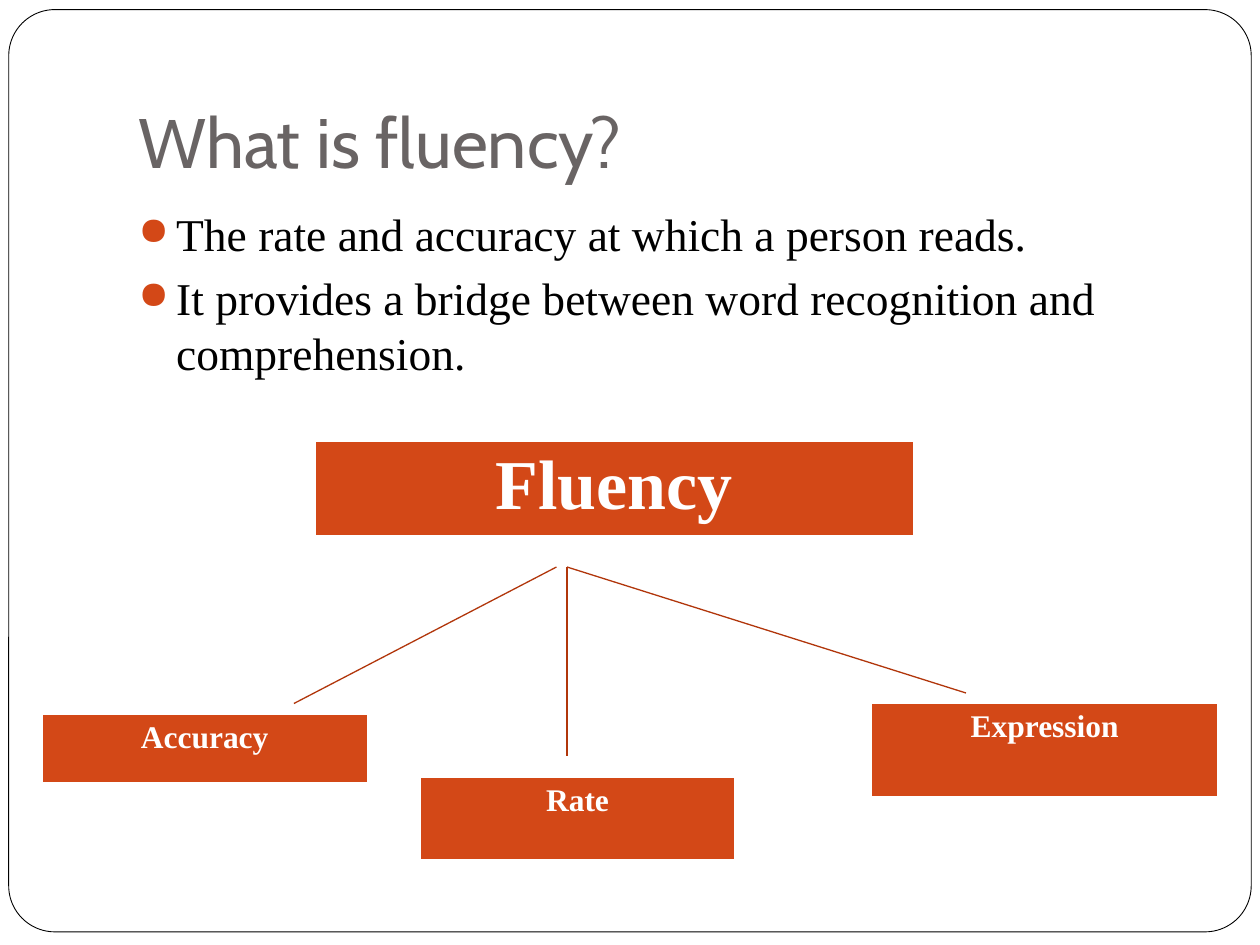
import pptx
import pptx.util
import pptx.dml.color
import pptx.enum.shapes
import pptx.enum.text
import pptx.oxml
import pptx.oxml.ns
from lxml import etree

Pt = pptx.util.Pt
RGBColor = pptx.dml.color.RGBColor
qn = pptx.oxml.ns.qn

WHITE = RGBColor(0xFF, 0xFF, 0xFF)
BLACK = RGBColor(0, 0, 0)
GRAY = RGBColor(0x69, 0x64, 0x64)
ORANGE = RGBColor(0xD3, 0x48, 0x17)
RUST = RGBColor(0xB1, 0x36, 0x0B)
SERIF = "Times New Roman"

POINTS = (
    "The rate and accuracy at which a person reads.",
    "It provides a bridge between word recognition and comprehension.",
)


def add_run(paragraph, text, font, size, color, bold=False):
    """Add one formatted run to a paragraph."""
    run = paragraph.add_run()
    run.text = text
    run.font.name = font
    run.font.size = Pt(size)
    run.font.bold = bold
    run.font.color.rgb = color


def add_frame(slide, left, top, width, height):
    """Draw the rounded border of the slide."""
    frame = slide.shapes.add_shape(
        pptx.enum.shapes.MSO_SHAPE.ROUNDED_RECTANGLE,
        Pt(left), Pt(top), Pt(width), Pt(height))
    frame.adjustments[0] = 0.05
    frame.shadow.inherit = False
    frame.fill.solid()
    frame.fill.fore_color.rgb = WHITE
    frame.line.color.rgb = BLACK
    frame.line.width = Pt(0.5)


def add_text_area(slide, left, top, width, height):
    """Add a wrapping text box and return its text frame."""
    area = slide.shapes.add_textbox(Pt(left), Pt(top), Pt(width), Pt(height)).text_frame
    area.word_wrap = True
    return area


def add_title(slide, left, top, width, height):
    """Place the heading at the bottom of its box."""
    heading = add_text_area(slide, left, top, width, height)
    heading.vertical_anchor = pptx.enum.text.MSO_ANCHOR.BOTTOM
    heading.margin_bottom = Pt(7.2)
    add_run(heading.paragraphs[0], "What is fluency?", "Cabin", 40, GRAY)


def add_bullet(paragraph, indent):
    """Give a paragraph a hanging orange bullet."""
    properties = paragraph._p.get_or_add_pPr()
    properties.set("marL", str(Pt(indent)))
    properties.set("indent", str(-Pt(indent)))
    color = etree.SubElement(properties, qn("a:buClr"))
    etree.SubElement(color, qn("a:srgbClr"), val=str(ORANGE))
    etree.SubElement(properties, qn("a:buSzPct"), val="85000")
    etree.SubElement(properties, qn("a:buChar"), char="●")


def add_definition(slide, left, top, width, height):
    """Write the bulleted definition of fluency."""
    definition = add_text_area(slide, left, top, width, height)
    for index, point in enumerate(POINTS):
        paragraph = definition.add_paragraph() if index else definition.paragraphs[0]
        paragraph.space_before = Pt(5.8)
        add_bullet(paragraph, 21.6)
        add_run(paragraph, point, SERIF, 26, BLACK)


def add_cell_borders(cell):
    """Draw white cell edges, the bottom one thicker."""
    properties = cell._tc.get_or_add_tcPr()
    for position, (edge, width) in enumerate((("L", 1), ("R", 1), ("T", 1), ("B", 3))):
        border = etree.Element(qn(f"a:ln{edge}"), w=str(Pt(width)))
        fill = etree.SubElement(border, qn("a:solidFill"))
        etree.SubElement(fill, qn("a:srgbClr"), val=str(WHITE))
        properties.insert(position, border)


def add_label(slide, left, top, width, height, text, size):
    """Place a one-cell table holding a concept name."""
    table = slide.shapes.add_table(
        1, 1, Pt(left), Pt(top), Pt(width), Pt(height)).table
    cell = table.cell(0, 0)
    cell.fill.solid()
    cell.fill.fore_color.rgb = ORANGE
    add_cell_borders(cell)
    paragraph = cell.text_frame.paragraphs[0]
    paragraph.alignment = pptx.enum.text.PP_ALIGN.CENTER
    add_run(paragraph, text, SERIF, size, WHITE, True)


def add_branch(slide, start_x, start_y, end_x, end_y):
    """Draw a thin line from the concept to one of its parts."""
    branch = slide.shapes.add_connector(
        pptx.enum.shapes.MSO_CONNECTOR.STRAIGHT,
        Pt(start_x), Pt(start_y), Pt(end_x), Pt(end_y))
    branch.line.color.rgb = RUST
    branch.line.width = Pt(0.75)
    etree.SubElement(branch._element.spPr, qn("a:effectLst"))


def add_fluency_tree(slide, left, top):
    """Place the concept, its three parts and the branches between them."""
    add_label(slide, left + 156, top, 342, 54, "Fluency", 40)
    branches = ((294, 72, 144, 150), (300, 72, 528, 144), (300, 72, 300, 180))
    for start_x, start_y, end_x, end_y in branches:
        add_branch(slide, left + start_x, top + start_y, left + end_x, top + end_y)
    parts = (
        ("Accuracy", 0, 156, 186, 40),
        ("Rate", 216, 192, 180, 48),
        ("Expression", 474, 150, 198, 54),
    )
    for text, x, y, width, height in parts:
        add_label(slide, left + x, top + y, width, height, text, 18)


def main():
    """Build the slide and save it."""
    presentation = pptx.Presentation()
    presentation.slide_width = Pt(720)
    presentation.slide_height = Pt(540)
    slide = presentation.slides.add_slide(presentation.slide_layouts[6])
    add_frame(slide, 5, 5.5, 710, 527)
    add_title(slide, 72, 21.6, 612, 90)
    add_definition(slide, 72, 114, 612, 360)
    add_fluency_tree(slide, 24, 252)
    presentation.save("out.pptx")


if __name__ == "__main__":
    main()
